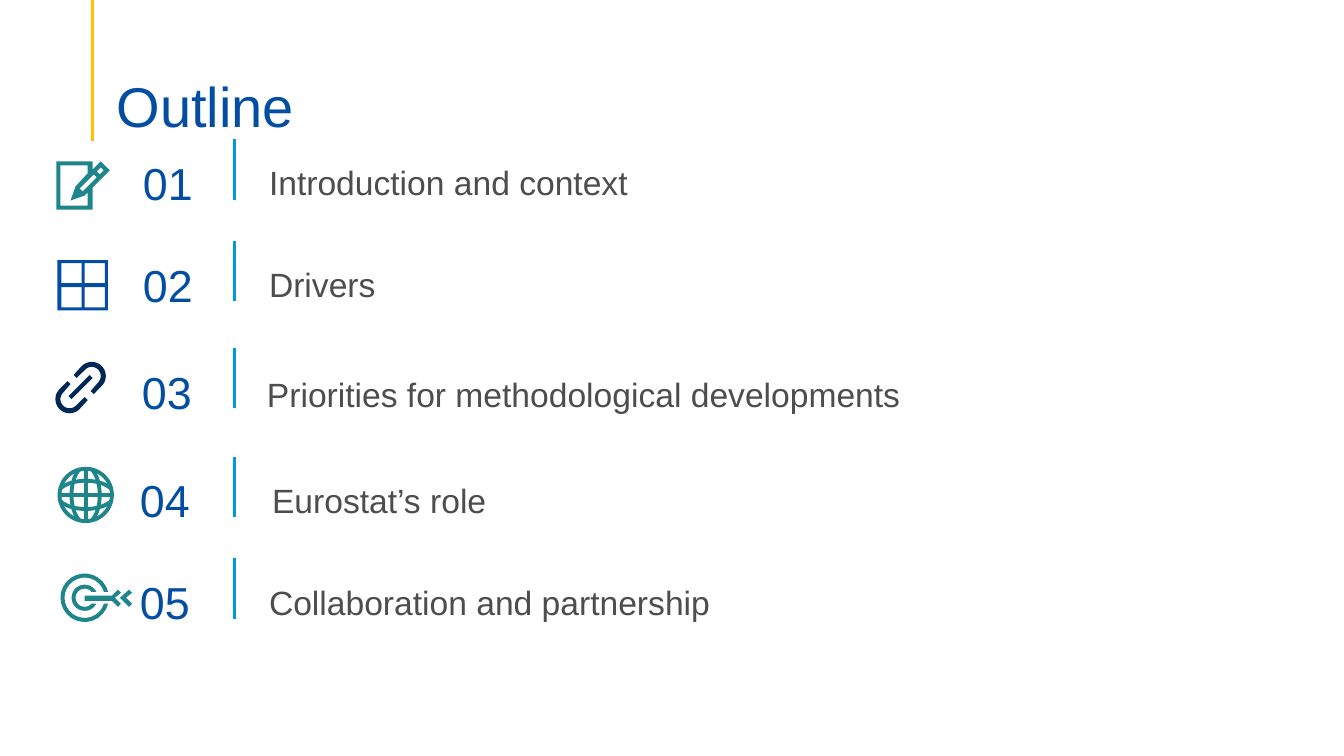
from math import cos, radians, sin

from lxml.etree import SubElement
from pptx import Presentation
from pptx.dml.color import RGBColor
from pptx.enum.shapes import MSO_CONNECTOR, MSO_SHAPE
from pptx.enum.text import MSO_ANCHOR
from pptx.oxml.ns import qn
from pptx.util import Inches, Pt

COLORS = {"blue": "034EA2", "gray": "4D4D4D", "gold": "FFC000",
          "sky": "009AD7", "navy": "002856", "teal": "1E858B"}
color = {name: RGBColor.from_string(value) for name, value in COLORS.items()}

deck = Presentation()
deck.slide_width, deck.slide_height = Inches(13.33), Inches(7.5)
page = deck.slides.add_slide(deck.slide_layouts[6])


def arc(x, y, radius_x, radius_y, start, end):
    """Points along an ellipse, angles in degrees, clockwise from the right."""
    angles = [radians(start + (end - start) * step / 24) for step in range(25)]
    return [(x + radius_x * cos(a), y + radius_y * sin(a)) for a in angles]


def draw_icon(contours, fill=None, stroke=None):
    """One freeform: filled closed contours, or open stroked ones."""
    builder = None
    for contour in contours:
        points = [(Inches(x), Inches(y)) for x, y in contour]
        if builder is None:
            builder = page.shapes.build_freeform(*points[0])
        else:
            builder.move_to(*points[0])
        builder.add_line_segments(points[1:], close=fill is not None)
    icon = builder.convert_to_shape()
    icon.shadow.inherit = False
    if fill:
        icon.fill.solid()
        icon.fill.fore_color.rgb = color[fill]
        icon.line.fill.background()
    else:
        icon.fill.background()
        icon.line.color.rgb = color[stroke]
        icon.line.width = Pt(2.75)


# Agenda rows: tick top, number left, label left, label top, label
rows = [
    (1.38, 1.32, 2.57, 1.41, "Introduction and context"),
    (2.39, 1.32, 2.57, 2.42, "Drivers"),
    (3.45, 1.31, 2.55, 3.51, "Priorities for methodological developments"),
    (4.53, 1.29, 2.60, 4.56, "Eurostat’s role"),
    (5.54, 1.29, 2.57, 5.57, "Collaboration and partnership"),
]

# Title, numbers and labels
texts = [("Outline", 1.06, 0.53, 11.5, 0.86, 40, "blue", MSO_ANCHOR.BOTTOM)]
for number, (tick, number_left, left, top, label) in enumerate(rows, 1):
    texts.append((f"{number:02}", number_left, tick + 0.27, 0.73, 0.32, 32, "blue", MSO_ANCHOR.MIDDLE))
    texts.append((label, left, top, 8.5, 0.6, 24, "gray", MSO_ANCHOR.BOTTOM))

for text, left, top, width, height, size, shade, anchor in texts:
    box = page.shapes.add_textbox(Inches(left), Inches(top), Inches(width), Inches(height))
    frame = box.text_frame
    frame.word_wrap = True
    frame.vertical_anchor = anchor
    if anchor == MSO_ANCHOR.BOTTOM:
        frame.margin_bottom = 0
    frame.text = text
    para = frame.paragraphs[0]
    if size == 40:
        para.line_spacing = 0.9
    span = para.runs[0]
    span.font.name = "Arial"
    span.font.size = Pt(size)
    span.font.color.rgb = color[shade]

# Straight lines: title rule, row ticks, globe axis and equator
lines = [(0.92, 0, 0.92, 1.4, "gold", 2.25)]
lines += [(2.33, row[0] + 0.6, 2.33, row[0], "sky", 2.25) for row in rows]
lines += [(0.85, 4.65, 0.85, 5.17, "teal", 2.75), (0.59, 4.91, 1.11, 4.91, "teal", 2.75)]
for x1, y1, x2, y2, shade, width in lines:
    line = page.shapes.add_connector(
        MSO_CONNECTOR.STRAIGHT, Inches(x1), Inches(y1), Inches(x2), Inches(y2))
    line.line.color.rgb = color[shade]
    line.line.width = Pt(width)
    SubElement(line._element.spPr, qn("a:effectLst"))

# Notepad and pencil
draw_icon([
    [(1, 1.6), (0.92, 1.68), (0.92, 1.6), (0.56, 1.6), (0.56, 2.08),
     (0.92, 2.08), (0.92, 1.86), (1.09, 1.69)],
    [(1.03, 1.69), (0.99, 1.73), (0.96, 1.7), (1, 1.66)],
    [(0.82, 1.9), (0.79, 1.87), (0.93, 1.73), (0.96, 1.76)],
    [(0.87, 2.04), (0.6, 2.04), (0.6, 1.64), (0.87, 1.64), (0.87, 1.72),
     (0.75, 1.85), (0.7, 1.99), (0.84, 1.94), (0.87, 1.91)],
], fill="teal")

# Window with four panes
squares = [(0.57, 2.58, 0.5)]
squares += [(x, y, 0.2) for x in (0.61, 0.84) for y in (2.61, 2.85)]
draw_icon([[(x, y), (x + side, y), (x + side, y + side), (x, y + side)]
           for x, y, side in squares], fill="blue")

# Chain: the upper link is the lower one turned by half
lower_link = [(0.84, 3.94), (0.87, 3.97), *arc(0.69, 3.96, 0.14, 0.14, 45, 225),
              (0.67, 3.78), (0.7, 3.81), *arc(0.69, 3.96, 0.09, 0.09, 225, 45)]
upper_link = [(1.6 - x, 7.69 - y) for x, y in lower_link]
bar = [(0.92, 3.75), (0.89, 3.72), (0.68, 3.93), (0.71, 3.96)]
draw_icon([lower_link, upper_link, bar], fill="navy")

# Globe: rim, two meridians and two parallels
rim = page.shapes.add_shape(MSO_SHAPE.OVAL, Inches(0.59), Inches(4.65), Inches(0.52), Inches(0.52))
rim.shadow.inherit = False
rim.fill.background()
rim.line.color.rgb = color["teal"]
rim.line.width = Pt(2.75)
for middle, radius_x, radius_y in [(0, 0.14, 0.28), (180, 0.14, 0.28),
                                   (90, 0.28, 0.14), (270, 0.28, 0.14)]:
    draw_icon([arc(0.85, 4.91, radius_x, radius_y, middle - 63, middle + 63)], stroke="teal")

# Target: two open rings, arrow and feather
rings = [arc(0.84, 5.93, outer, outer, gap, 360 - gap)
         + arc(0.84, 5.93, inner, inner, 360 - inner_gap, inner_gap)
         for outer, gap, inner, inner_gap in [(0.24, 14, 0.2, 17), (0.13, 27, 0.09, 40)]]
arrow = [(1.2, 5.88), (1.17, 5.85), (1.11, 5.91), (0.84, 5.91), (0.84, 5.96),
         (1.11, 5.96), (1.17, 6.02), (1.2, 5.99), (1.14, 5.93)]
feather = [(1.31, 5.99), (1.25, 5.93), (1.31, 5.88), (1.28, 5.85), (1.19, 5.93), (1.28, 6.02)]
draw_icon(rings + [arrow, feather], fill="teal")

deck.save("out.pptx")
